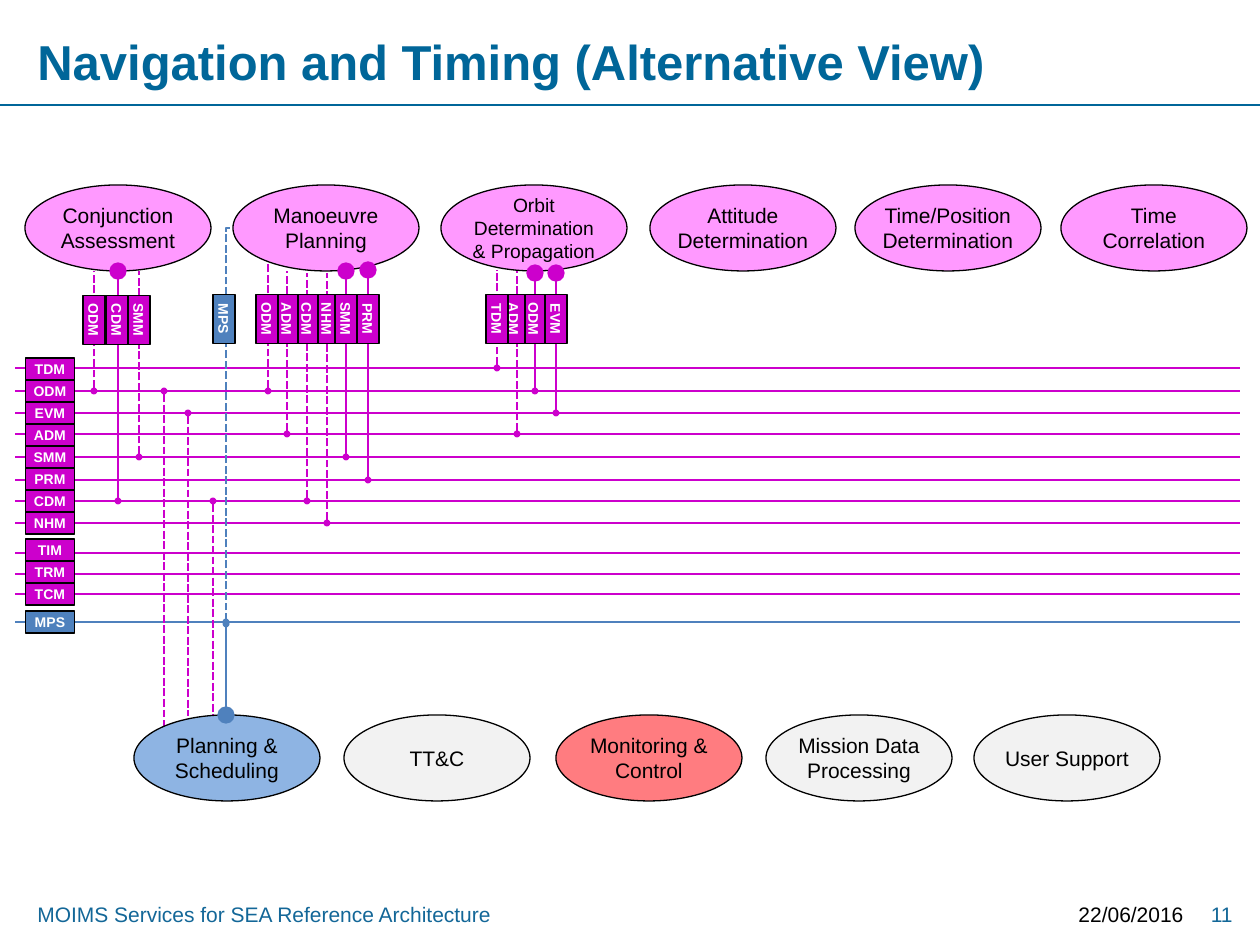
from lxml.etree import SubElement
from pptx import Presentation
from pptx.dml.color import RGBColor
from pptx.enum.dml import MSO_LINE_DASH_STYLE as DASH
from pptx.enum.shapes import MSO_CONNECTOR_TYPE as LINK, MSO_SHAPE as SHAPE
from pptx.enum.text import MSO_ANCHOR as ANCHOR, PP_ALIGN as ALIGN
from pptx.oxml.ns import qn
from pptx.util import Pt

PX = 914400 / 126
MAGENTA = RGBColor(0xCC, 0x00, 0xCC)
STEEL = RGBColor(0x4F, 0x81, 0xBD)
PINK = RGBColor(0xFF, 0x99, 0xFF)
SKY = RGBColor(0x8E, 0xB4, 0xE3)
CORAL = RGBColor(0xFF, 0x7C, 0x80)
GREY = RGBColor(0xF2, 0xF2, 0xF2)
TEAL = RGBColor(0x00, 0x66, 0x99)
FOOTER_BLUE = RGBColor(0x13, 0x67, 0x98)
BLACK = RGBColor(0x00, 0x00, 0x00)
WHITE = RGBColor(0xFF, 0xFF, 0xFF)

deck = Presentation()
deck.slide_width, deck.slide_height = round(1260 * PX), round(945 * PX)
slide = deck.slides.add_slide(deck.slide_layouts[6])


def add_text(box, text, size, color, bold=False, align=ALIGN.CENTER,
             anchor=ANCHOR.MIDDLE, insets=None):
    frame = box.text_frame
    frame.word_wrap = True
    frame.vertical_anchor = anchor
    if insets:
        side, end = (round(inset * PX) for inset in insets)
        frame.margin_left = frame.margin_right = side
        frame.margin_top = frame.margin_bottom = end
    frame.text = text
    for paragraph in frame.paragraphs:
        paragraph.alignment = align
        for run in paragraph.runs:
            for name, value in {"name": "Arial", "size": Pt(size), "bold": bold}.items():
                setattr(run.font, name, value)
            run.font.color.rgb = color
        for line_break in paragraph._p.findall(qn("a:br")):
            SubElement(line_break, qn("a:rPr"), sz=str(size * 100))


def add_line(x1, y1, x2, y2, color, dashed=False, head=None, tail=None, kind=LINK.STRAIGHT):
    link = slide.shapes.add_connector(kind, *(round(v * PX) for v in (x1, y1, x2, y2)))
    link.line.color.rgb = color
    link.line.width = Pt(1.5)
    if dashed:
        link.line.dash_style = DASH.SQUARE_DOT
    for tag, size in (("a:headEnd", head), ("a:tailEnd", tail)):
        if size:
            SubElement(link.line._get_or_add_ln(), qn(tag), type="oval", w=size, len=size)
    SubElement(link._element.spPr, qn("a:effectLst"))
    return link


add_line(0, 105, 1260, 105, TEAL)
captions = [
    ("Navigation and Timing (Alternative View)", 25, 26, 1002, 69, 28, TEAL,
     True, ALIGN.LEFT, ANCHOR.MIDDLE),
    ("MOIMS Services for SEA Reference Architecture", 25, 895, 1022, 38, 12, FOOTER_BLUE,
     False, ALIGN.LEFT, ANCHOR.TOP),
    ("22/06/2016", 1057, 895, 139, 38, 12, BLACK, False, ALIGN.RIGHT, ANCHOR.TOP),
    ("11", 1186, 895, 59, 38, 12, FOOTER_BLUE, False, ALIGN.RIGHT, ANCHOR.TOP),
]
for text, x, y, w, h, *style in captions:
    caption = slide.shapes.add_textbox(*(round(v * PX) for v in (x, y, w, h)))
    add_text(caption, text, *style)

bus_y = {"TDM": 368, "ODM": 391, "EVM": 413, "ADM": 434, "SMM": 457, "PRM": 480,
         "CDM": 501, "NHM": 523, "TIM": 553, "TRM": 574, "TCM": 594, "MPS": 622}
for message, y in bus_y.items():
    add_line(1240, y, 15, y, STEEL if message == "MPS" else MAGENTA)

labels = []
for top, messages in ((358, list(bus_y)[:8]), (539, ["TIM", "TRM", "TCM"]), (611, ["MPS"])):
    labels += [(message, 50, top + 11 + 22 * row, 0) for row, message in enumerate(messages)]

dashed_drops = [
    (94, "ODM", 271), (139, "SMM", 271),
    (268, "ODM", 260), (287, "ADM", 271), (307, "CDM", 273), (327, "NHM", 273),
    (497, "TDM", 270), (517, "ADM", 271),
    (164, "ODM", 731), (188, "EVM", 716), (213, "CDM", 716),
]
for x, message, end_y in dashed_drops:
    add_line(x, bus_y[message], x, end_y, MAGENTA, dashed=True, head="sm")

planning_link = add_line(428, 430, 32, 422, STEEL, dashed=True, head="sm", kind=LINK.ELBOW)
planning_link._element.spPr.find(qn("a:xfrm")).set("rot", "5400000")
planning_link._element.spPr.find(qn("a:prstGeom")).set("prst", "bentConnector2")

functions = [
    ("Conjunction\vAssessment", 25, 185, PINK, 12),
    ("Manoeuvre\vPlanning", 233, 185, PINK, 12),
    ("Orbit\vDetermination & Propagation", 441, 185, PINK, 11),
    ("Attitude\vDetermination", 650, 185, PINK, 12),
    ("Time/Position\vDetermination", 855, 185, PINK, 12),
    ("Time\nCorrelation", 1061, 185, PINK, 12),
    ("Planning & Scheduling", 134, 715, SKY, 12),
    ("TT&C", 344, 715, GREY, 12),
    ("Monitoring &\vControl", 556, 715, CORAL, 12),
    ("Mission Data\vProcessing", 766, 715, GREY, 12),
    ("User Support", 974, 715, GREY, 12),
]
for text, x, y, fill, size in functions:
    function = slide.shapes.add_shape(SHAPE.OVAL, *(round(v * PX) for v in (x, y, 186, 86)))
    function.shadow.inherit = False
    function.fill.solid()
    function.fill.fore_color.rgb = fill
    function.line.color.rgb = BLACK
    function.line.width = Pt(0.75)
    add_text(function, text, size, BLACK, insets=(0, 6))

provided_drops = [
    (118, "CDM", 271, MAGENTA), (346, "SMM", 271, MAGENTA), (368, "PRM", 270, MAGENTA),
    (535, "ODM", 273, MAGENTA), (556, "EVM", 273, MAGENTA), (226, "MPS", 715, STEEL),
]
for x, message, end_y, color in provided_drops:
    add_line(x, bus_y[message], x, end_y, color, head="sm", tail="lg")

tag_groups = [
    (320, [("ODM", 94), ("CDM", 117), ("SMM", 139)]),
    (319, [("MPS", 224), ("NHM", 327), ("CDM", 307), ("ADM", 287), ("ODM", 267),
           ("PRM", 368), ("SMM", 346), ("ODM", 534), ("EVM", 556), ("ADM", 514),
           ("TDM", 497)]),
]
for y, tags in tag_groups:
    labels += [(message, x, y, 90) for message, x in tags]
for message, x, y, turn in labels:
    label = slide.shapes.add_shape(
        SHAPE.RECTANGLE, *(round(v * PX) for v in (x - 24.5, y - 11, 49, 22)))
    label.rotation = turn
    label.shadow.inherit = False
    label.fill.solid()
    label.fill.fore_color.rgb = STEEL if message == "MPS" else MAGENTA
    label.line.color.rgb = BLACK
    label.line.width = Pt(0.75)
    add_text(label, message, 8, WHITE, bold=True, insets=(2, 2))

deck.save("out.pptx")
